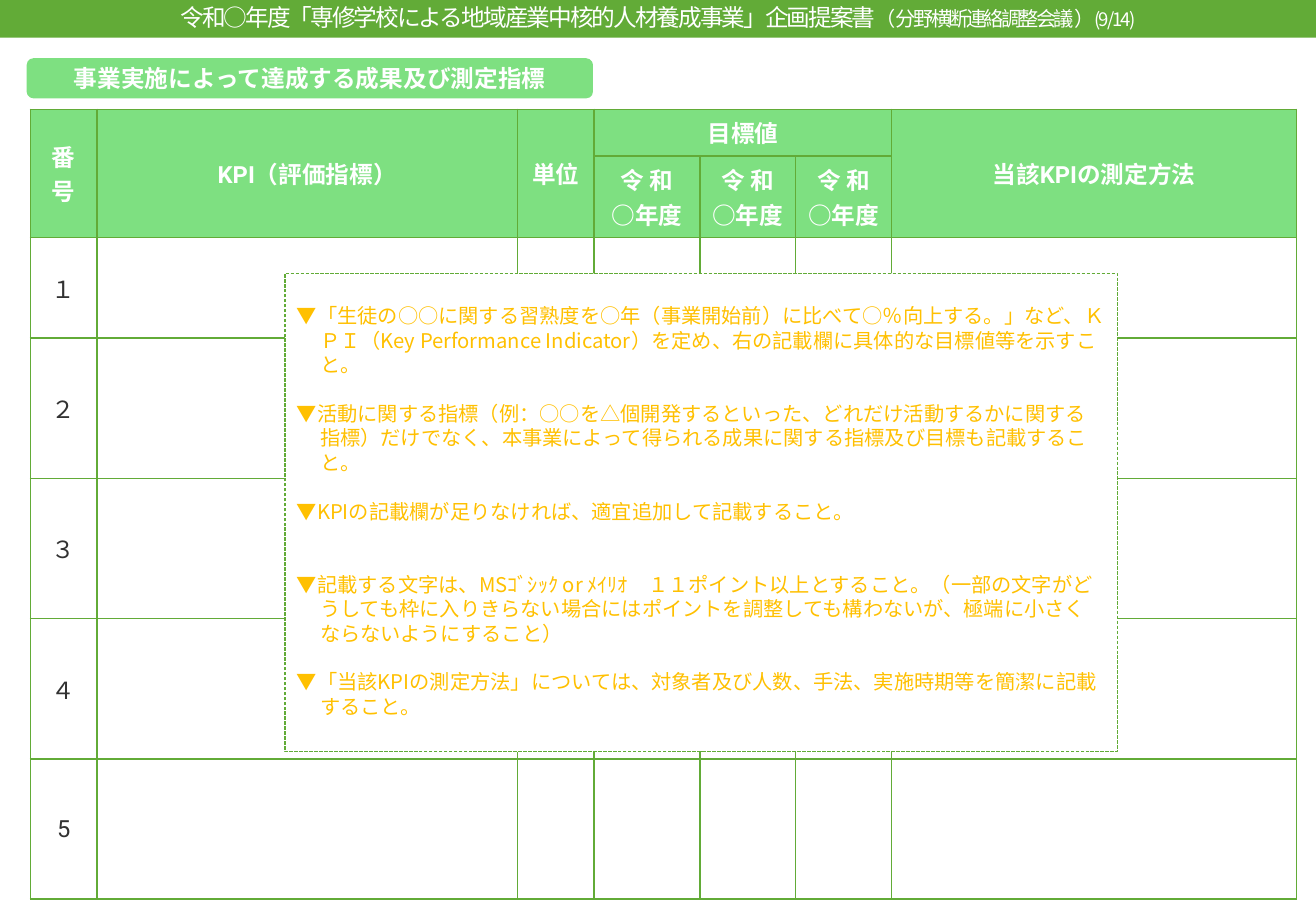
from lxml import etree
from pptx import Presentation, util as u
from pptx.dml.color import RGBColor
from pptx.enum import dml, shapes, text
from pptx.oxml.ns import qn

W, H = u.Inches(10.83), u.Inches(7.5)
C = {"green": "62AB37", "mint": "7EE081", "white": "FFFFFF", "ink": "323232", "amber": "FFC000"}
SANS, CJK = "Roboto", "Noto Sans CJK JP"
COLS = [5.08, 31.95, 5.82, 8.03, 7.29, 7.29, 30.75]
ROWS = [5.07, 8.93, 11.07] + [15.4] * 4
HEADS = {0: "番号", 1: "KPI（評価指標）", 2: "単位", 6: "当該KPIの測定方法"}
NUMBERS = ["１", "２", "３", "４", "5"]
LINE = 14.45
TITLE = [
    ("令和○年度「専修学校による地域産業中核的人材養成事業」企画提案書", 14, -120),
    ("（", 12, -120),
    ("分野横断連絡調整会議", 12, -160),
    ("）", 12, -120),
    ("(9/14)", 11, -120),
]
NOTES = [
    (0, "▼「生徒の○○に関する習熟度を○年（事業開始前）に比べて○％向上する。」など、ＫＰＩ（Key Performance Indicator）を定め、右の記載欄に具体的な目標値等を示すこと。"),
    (1, "▼活動に関する指標（例：○○を△個開発するといった、どれだけ活動するかに関する指標）だけでなく、本事業によって得られる成果に関する指標及び目標も記載すること。"),
    (1, "▼KPIの記載欄が足りなければ、適宜追加して記載すること。"),
    (2, "▼記載する文字は、MSｺﾞｼｯｸ or ﾒｲﾘｵ　１１ポイント以上とすること。（一部の文字がどうしても枠に入りきらない場合にはポイントを調整しても構わないが、極端に小さくならないようにすること）"),
    (1, "▼「当該KPIの測定方法」については、対象者及び人数、手法、実施時期等を簡潔に記載すること。"),
]


def rgb(name):
    return RGBColor.from_string(C[name])


def px(share):
    return int(W * share / 100)


def py(share):
    return int(H * share / 100)


def add_run(p, words, size, color, font=CJK, bold=False, spacing=None):
    r = p.add_run()
    r.text = words
    r.font.size, r.font.name, r.font.bold = u.Pt(size), font, bold
    r.font.color.rgb = rgb(color)
    rpr = r._r.get_or_add_rPr()
    etree.SubElement(rpr, qn("a:ea")).set("typeface", CJK)
    if spacing:
        rpr.set("spc", str(spacing))


def add_box(s, kind, x, y, w, h, fill):
    sp = s.shapes.add_shape(kind, px(x), py(y), px(w), py(h))
    sp.shadow.inherit = False
    sp.fill.solid()
    sp.fill.fore_color.rgb = rgb(fill)
    sp.line.fill.background()
    tf = sp.text_frame
    tf.word_wrap = True
    tf.vertical_anchor = text.MSO_ANCHOR.MIDDLE
    tf.margin_top = tf.margin_bottom = 0
    tf.paragraphs[0].alignment = text.PP_ALIGN.CENTER
    return sp


def style_cell(cell, fill=None):
    if fill:
        cell.fill.solid()
        cell.fill.fore_color.rgb = rgb(fill)
    else:
        cell.fill.background()
    tcpr = cell._tc.get_or_add_tcPr()
    for i, side in enumerate(("lnL", "lnR", "lnT", "lnB")):
        ln = etree.Element(qn("a:" + side), w=str(u.Pt(1)))
        solid = etree.SubElement(ln, qn("a:solidFill"))
        etree.SubElement(solid, qn("a:srgbClr")).set("val", C["green"])
        tcpr.insert(i, ln)


def write_cell(cell, lines, color, font=SANS, bold=True):
    cell.vertical_anchor = text.MSO_ANCHOR.MIDDLE
    tf = cell.text_frame
    for i, words in enumerate(lines):
        p = tf.add_paragraph() if i else tf.paragraphs[0]
        p.alignment = text.PP_ALIGN.CENTER
        add_run(p, words, 14, color, font, bold)


def add_kpi_table(s):
    frame = s.shapes.add_table(len(ROWS), len(COLS), px(2.31), py(12), px(sum(COLS)), py(sum(ROWS)))
    tbl = frame.table
    tbl.first_row = tbl.horz_banding = False
    for col, share in zip(tbl.columns, COLS):
        col.width = px(share)
    for i, (row, share) in enumerate(zip(tbl.rows, ROWS)):
        row.height = py(share)
        for cell in row.cells:
            style_cell(cell, "mint" if i < 2 else None)
    for c, words in HEADS.items():
        tbl.cell(0, c).merge(tbl.cell(1, c))
        write_cell(tbl.cell(0, c), [words], "white")
    tbl.cell(0, 3).merge(tbl.cell(0, 5))
    write_cell(tbl.cell(0, 3), ["目標値"], "white")
    for c in range(3, 6):
        write_cell(tbl.cell(1, c), ["令 和", "○年度"], "white", CJK)
    for i, number in enumerate(NUMBERS, 2):
        write_cell(tbl.cell(i, 0), [number], "ink", bold=False)


def add_notes(s):
    sp = add_box(s, shapes.MSO_SHAPE.RECTANGLE, 21.65, 30, 63.25, 52.53, "white")
    sp.line.color.rgb = rgb("green")
    sp.line.width = u.Pt(0.75)
    sp.line.dash_style = dml.MSO_LINE.SQUARE_DOT
    tf = sp.text_frame
    tf.vertical_anchor = text.MSO_ANCHOR.TOP
    tf.margin_top = u.Inches(0.25)
    for i, (gap, words) in enumerate(NOTES):
        p = tf.add_paragraph() if i else tf.paragraphs[0]
        p.alignment = text.PP_ALIGN.LEFT
        p.line_spacing = u.Pt(LINE)
        p.space_before = u.Pt(LINE * gap)
        ppr = p._p.get_or_add_pPr()
        ppr.set("marL", str(u.Inches(0.19)))
        ppr.set("indent", str(-u.Inches(0.19)))
        add_run(p, words, 12, "amber")


def add_title(s):
    sp = add_box(s, shapes.MSO_SHAPE.RECTANGLE, 0, 0, 100, 4.13, "green")
    sp.text_frame.margin_bottom = u.Inches(0.03)
    for words, size, spacing in TITLE:
        add_run(sp.text_frame.paragraphs[0], words, size, "white", spacing=spacing)


def main():
    prs = Presentation()
    prs.slide_width, prs.slide_height = W, H
    s = prs.slides.add_slide(prs.slide_layouts[6])
    badge = add_box(s, shapes.MSO_SHAPE.ROUNDED_RECTANGLE, 2.03, 6.4, 43.03, 4.4, "mint")
    add_run(badge.text_frame.paragraphs[0], "事業実施によって達成する成果及び測定指標", 14, "white", SANS, True)
    add_kpi_table(s)
    add_notes(s)
    add_title(s)
    prs.save("out.pptx")


if __name__ == "__main__":
    main()
